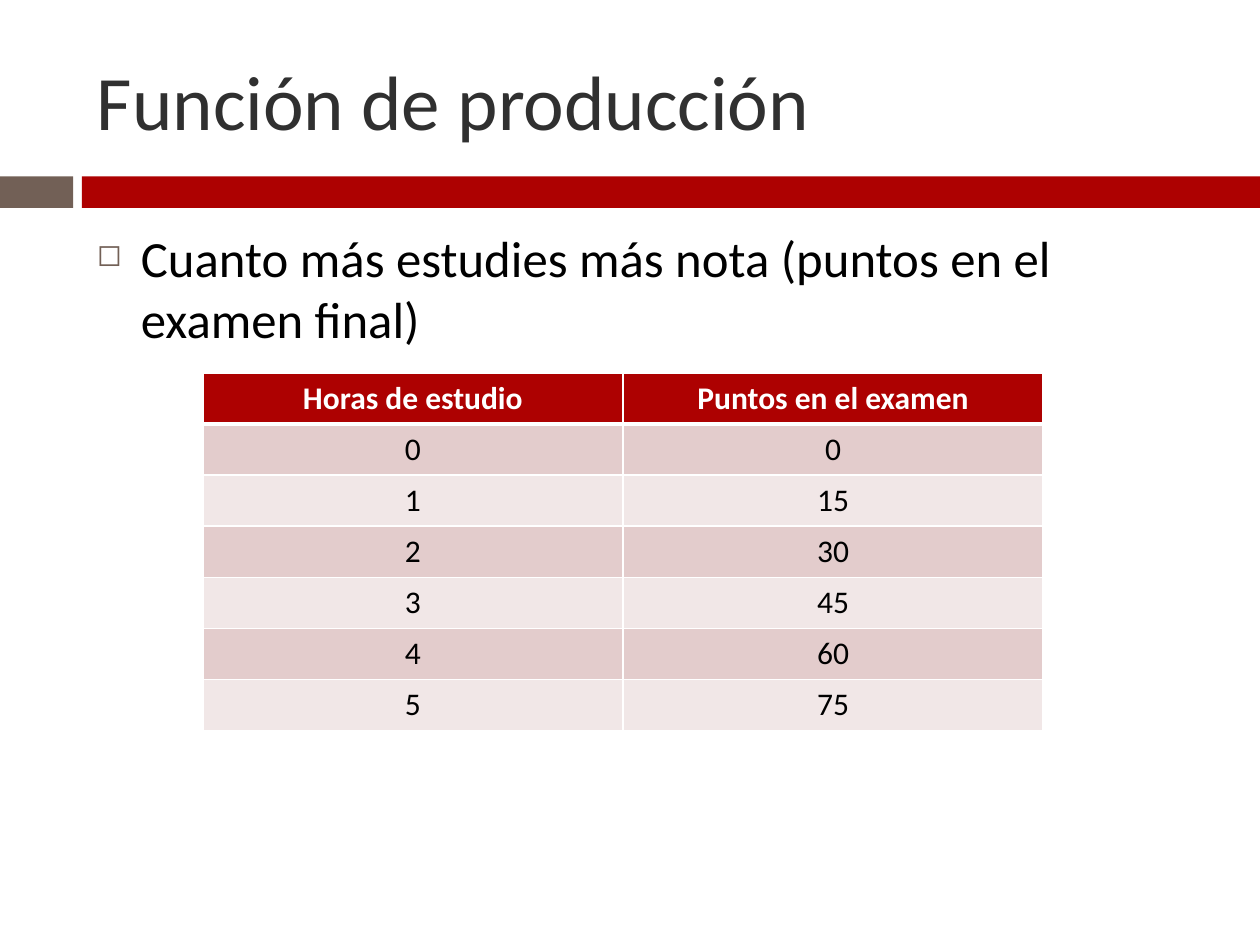
from lxml.etree import SubElement
from pptx import Presentation
from pptx.dml.color import RGBColor
from pptx.enum.shapes import MSO_SHAPE
from pptx.enum.text import MSO_ANCHOR, PP_ALIGN
from pptx.oxml import parse_xml
from pptx.oxml.ns import nsdecls, qn
from pptx.util import Inches, Pt

FONT = "Calibri"
RED, BROWN, WHITE, BLACK = "AD0101", "726056", "FFFFFF", "000000"
BANDS = ("E3CCCC", "F1E7E7")
HEADERS = ("Horas de estudio", "Puntos en el examen")
POINTS_PER_HOUR = 15


def color(value):
    return RGBColor.from_string(value)


def format_runs(p, size, value, bold=False):
    for r in p.runs:
        r.font.name = FONT
        r.font.size = Pt(size)
        r.font.bold = bold
        r.font.color.rgb = color(value)


def add_text(s, box, text, size, value, anchor):
    tf = s.shapes.add_textbox(*map(Inches, box)).text_frame
    tf.word_wrap = True
    tf.vertical_anchor = anchor
    tf.text = text
    p = tf.paragraphs[0]
    format_runs(p, size, value)
    return p


def add_band(s, box, gap_left, gap_right):
    """Brown block and red bar on either side of a gap."""
    x, y, w, h = box
    for left, right, fill in ((x, gap_left, BROWN), (gap_right, x + w, RED)):
        sp = s.shapes.add_shape(MSO_SHAPE.RECTANGLE, Inches(left), Inches(y),
                                Inches(right - left), Inches(h))
        sp.shadow.inherit = False
        sp.fill.solid()
        sp.fill.fore_color.rgb = color(fill)
        sp.line.fill.background()


def add_bullet(s, box, text):
    p = add_text(s, box, text, 29, BLACK, MSO_ANCHOR.TOP)
    p.space_before = Pt(7)
    pPr = p._p.get_or_add_pPr()
    pPr.set("marL", str(Inches(0.35)))
    pPr.set("indent", str(-Inches(0.35)))
    SubElement(SubElement(pPr, qn("a:buClr")), qn("a:srgbClr"), val=BROWN)
    SubElement(pPr, qn("a:buSzPct"), val="60000")
    SubElement(pPr, qn("a:buChar"), char="◻")


def set_borders(cell, widths):
    tcPr = cell._tc.get_or_add_tcPr()
    for i, (side, width) in enumerate(zip("LRTB", widths)):
        tcPr.insert(i, parse_xml(
            f'<a:ln{side} {nsdecls("a")} w="{Pt(width)}"><a:solidFill>'
            f'<a:srgbClr val="{WHITE}"/></a:solidFill></a:ln{side}>'))


def add_score_table(s, box):
    rows = [HEADERS] + [(h, h * POINTS_PER_HOUR) for h in range(6)]
    x, y, w, h = map(Inches, box)
    table = s.shapes.add_table(len(rows), len(HEADERS), x, y, w, h).table
    for i, row in enumerate(rows):
        header = i == 0
        table.rows[i].height = int(h / len(rows))
        for j, value in enumerate(row):
            cell = table.cell(i, j)
            cell.text = str(value)
            cell.fill.solid()
            cell.fill.fore_color.rgb = color(RED if header else BANDS[(i - 1) % 2])
            # Thick rule between the header and the first row
            set_borders(cell, (1, 1, 3 if i == 1 else 1, 3 if header else 1))
            p = cell.text_frame.paragraphs[0]
            p.alignment = PP_ALIGN.CENTER
            format_runs(p, 18, WHITE if header else BLACK, header)


def main():
    prs = Presentation()
    prs.slide_width, prs.slide_height = Inches(10), Inches(7.5)
    s = prs.slides.add_slide(prs.slide_layouts[6])

    # Header
    add_band(s, (0, 1.4, 10, 0.25), 0.58, 0.65)
    add_text(s, (0.67, 0.25, 8.92, 1.08), "Función de producción", 44,
             "303030", MSO_ANCHOR.MIDDLE)

    # Body
    add_bullet(s, (0.67, 1.75, 8.92, 4.92),
               "Cuanto más estudies más nota (puntos en el examen final)")
    add_score_table(s, (1.61, 2.96, 6.67, 2.84))

    prs.save("out.pptx")


if __name__ == "__main__":
    main()
